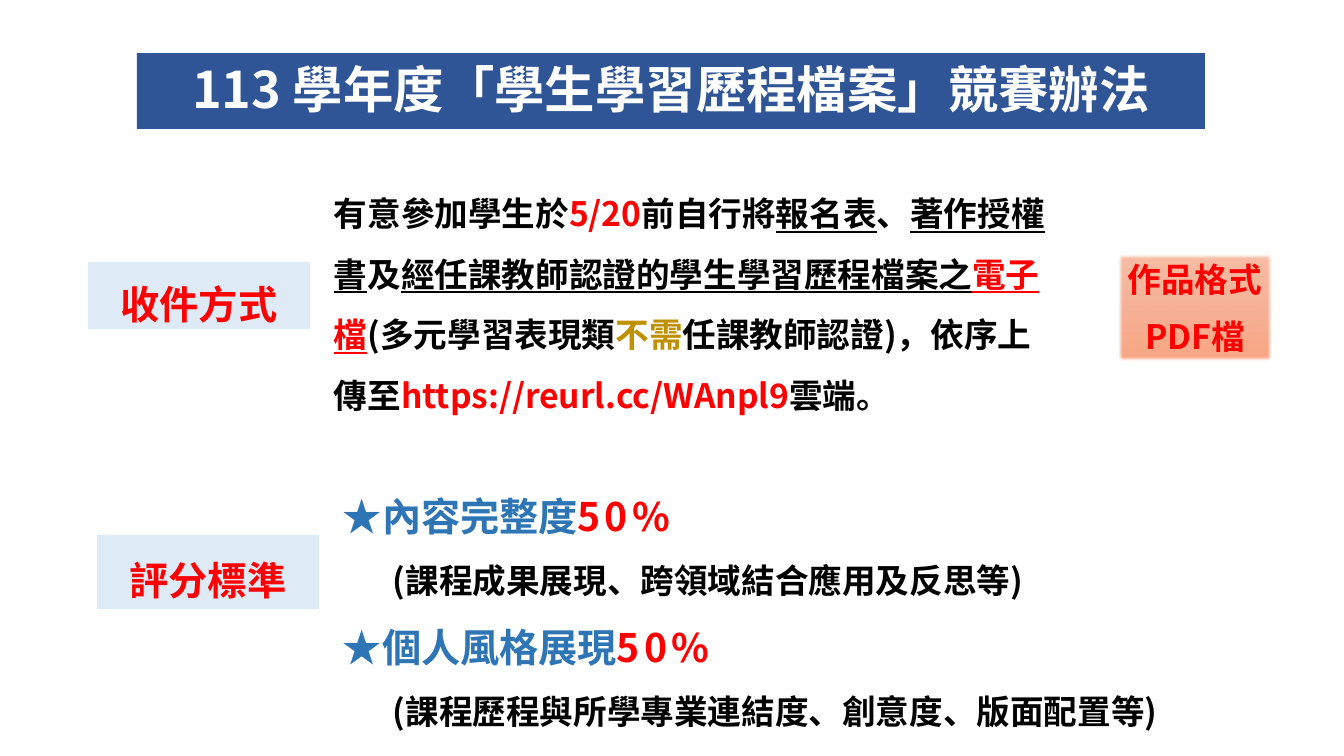
from copy import deepcopy

from lxml.etree import SubElement
from pptx import Presentation
from pptx.dml.color import RGBColor
from pptx.enum.shapes import MSO_SHAPE
from pptx.enum.text import MSO_ANCHOR, PP_ALIGN
from pptx.oxml.ns import qn
from pptx.util import Pt

EMU_PER_PX = 914400 / 100.8
FONT_NAME = "Noto Sans CJK SC"

WHITE = RGBColor(0xFF, 0xFF, 0xFF)
BLACK = RGBColor(0x00, 0x00, 0x00)
RED = RGBColor(0xFF, 0x00, 0x00)
GOLD = RGBColor(0xBF, 0x90, 0x00)
BLUE = RGBColor(0x2E, 0x75, 0xB6)
NAVY = RGBColor(0x2F, 0x55, 0x97)
PALE_BLUE = RGBColor(0xDE, 0xEB, 0xF7)
ORANGE = RGBColor(0xED, 0x7D, 0x31)
PEACH_STOPS = [
    RGBColor(0xF7, 0xBD, 0xA5),
    RGBColor(0xF5, 0xB1, 0x96),
    RGBColor(0xF8, 0xA5, 0x82),
]


def px(length):
    return round(length * EMU_PER_PX)


class SlideBuilder:
    def __init__(self, slide):
        self.slide = slide

    def style_paragraph(self, paragraph, size, color=None):
        """Set bold text in the slide font, for Latin and East Asian letters."""
        font = paragraph.font
        font.name, font.size, font.bold = FONT_NAME, Pt(size), True
        SubElement(font._element, qn("a:ea"), typeface=FONT_NAME)
        if color is not None:
            font.color.rgb = color

    def add_run(self, paragraph, text, color, underline=False, spacing=0):
        """Add coloured text; spacing is the letter spacing in points."""
        run = paragraph.add_run()
        run.text = text
        run.font.color.rgb = color
        if underline:
            run.font.underline = True
        if spacing:
            run.font._element.set("spc", str(spacing * 100))

    def add_box(self, left, top, width, height, lines, size, color, fill=None,
                anchor=MSO_ANCHOR.MIDDLE, line_spacing=None, gap=0):
        """Add a rectangle of centred lines, gap points apart."""
        shape = self.slide.shapes.add_shape(
            MSO_SHAPE.RECTANGLE, px(left), px(top), px(width), px(height))
        shape.shadow.inherit = False
        shape.line.fill.background()
        if fill is not None:
            shape.fill.solid()
            shape.fill.fore_color.rgb = fill
        frame = shape.text_frame
        frame.word_wrap = True
        frame.vertical_anchor = anchor
        for index, line in enumerate(lines):
            paragraph = frame.add_paragraph() if index else frame.paragraphs[0]
            paragraph.text = line
            paragraph.alignment = PP_ALIGN.CENTER
            if line_spacing:
                paragraph.line_spacing = Pt(line_spacing)
            if index:
                paragraph.space_before = Pt(gap)
            self.style_paragraph(paragraph, size, color)
        return shape

    def add_label(self, left, top, height, text):
        self.add_box(left, top, 222, height, [text], 28, RED, PALE_BLUE,
                     line_spacing=45)

    def add_soft_badge(self, left, top, width, height, lines):
        """Add a box with a vertical gradient and soft edges."""
        shape = self.add_box(left, top, width, height, lines, 24, RED, gap=12)
        shape.line.color.rgb = ORANGE
        shape.line.width = Pt(0.5)
        shape.fill.gradient()
        shape.fill.gradient_angle = 270
        properties = shape._element.spPr
        stop_list = properties.find(".//" + qn("a:gsLst"))
        stop_list.insert(1, deepcopy(stop_list[0]))
        for index, color in enumerate(PEACH_STOPS):
            stop = shape.fill.gradient_stops[index]
            stop.position = index / 2
            stop.color.rgb = color
        effects = properties.find(qn("a:effectLst"))
        SubElement(effects, qn("a:softEdge"), rad=str(Pt(2.5)))

    def add_text(self, left, top, width, height, paragraphs):
        """Add paragraphs given as (size, indent in px, runs)."""
        box = self.slide.shapes.add_textbox(
            px(left), px(top), px(width), px(height))
        frame = box.text_frame
        frame.word_wrap = True
        for index, (size, indent, runs) in enumerate(paragraphs):
            paragraph = frame.add_paragraph() if index else frame.paragraphs[0]
            paragraph.line_spacing = 1.5
            if indent:
                paragraph.level = 1
                paragraph._p.get_or_add_pPr().set("marL", str(px(indent)))
            self.style_paragraph(paragraph, size)
            for run in runs:
                self.add_run(paragraph, *run)


def main():
    presentation = Presentation()
    presentation.slide_width = px(1344)
    presentation.slide_height = px(756)
    builder = SlideBuilder(
        presentation.slides.add_slide(presentation.slide_layouts[6]))

    builder.add_box(137, 53, 1068, 76, ["113 學年度「學生學習歷程檔案」競賽辦法"],
                    36, WHITE, NAVY, MSO_ANCHOR.TOP, line_spacing=43.2)

    builder.add_label(88, 262, 67, "收件方式")
    builder.add_text(324, 168, 750, 254, [(24, 0, [
        ("有意參加學生於", BLACK),
        ("5/20", RED),
        ("前自行將", BLACK),
        ("報名表", BLACK, True),
        ("、", BLACK),
        ("著作授權書", BLACK, True),
        ("及", BLACK),
        ("經任課教師認證的學生學習歷程檔案之", BLACK, True),
        ("電子檔", RED, True),
        ("(多元學習表現類", BLACK),
        ("不需", GOLD),
        ("任課教師認證)，依序上傳至", BLACK),
        ("https://reurl.cc/WAnpl9", RED),
        ("雲端。", BLACK),
    ])])
    builder.add_soft_badge(1117, 253, 156, 109, ["作品格式", "PDF檔"])

    builder.add_label(97, 535, 74, "評分標準")
    criteria = [
        ("內容完整度", "課程成果展現、跨領域結合應用及反思等"),
        ("個人風格展現", "課程歷程與所學專業連結度、創意度、版面配置等"),
    ]
    paragraphs = []
    for title, detail in criteria:
        paragraphs.append(
            (28, 0, [("★" + title, BLUE), ("50%", RED, False, 3)]))
        paragraphs.append((24, 50, [(f"({detail})", BLACK)]))
    builder.add_text(333, 464, 971, 275, paragraphs)

    presentation.save("out.pptx")


if __name__ == "__main__":
    main()
